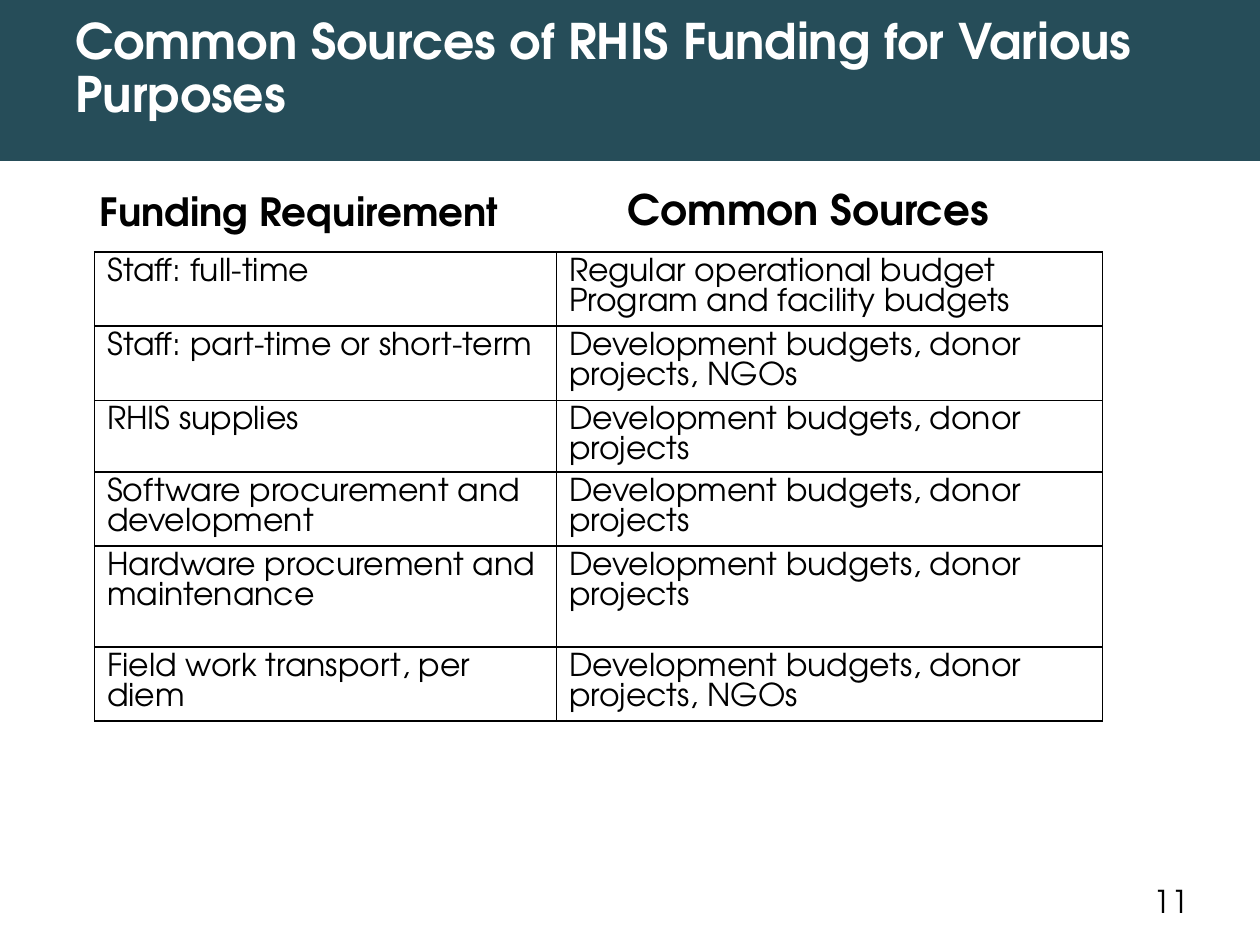
from pptx import Presentation
from pptx.dml.color import RGBColor as RGB
from pptx.enum.shapes import MSO_SHAPE as Shape
from pptx.enum.text import MSO_ANCHOR as Anchor, PP_ALIGN as Align
from pptx.oxml.ns import qn
from pptx.util import Pt
from lxml.etree import SubElement as Sub

TEAL = RGB(0x26, 0x4D, 0x59)
WHITE = RGB(0xFF, 0xFF, 0xFF)
BLACK = RGB(0, 0, 0)

DONOR = "Development budgets, donor projects"
ROWS = [
    ("Staff: full-time", "Regular operational budget\nProgram and facility budgets"),
    ("Staff: part-time or short-term", DONOR + ", NGOs"),
    ("RHIS supplies", DONOR),
    ("Software procurement and development", DONOR),
    ("Hardware procurement and maintenance", DONOR),
    ("Field work transport, per diem", DONOR + ", NGOs"),
]
COLS = [264, 312]
HIGH = [42.4, 42.4, 40.9, 42.4, 57.7, 42.4]


class Deck:
    font = "TeX Gyre Adventor"

    def __init__(self, wide, high):
        self.prs = Presentation()
        self.prs.slide_width, self.prs.slide_height = Pt(wide), Pt(high)
        self.slide = self.prs.slides.add_slide(self.prs.slide_layouts[6])

    def fill(self, frame, text, size, color=BLACK, bold=False, align=Align.LEFT,
             lead=None, before=0, indent=0):
        frame.word_wrap = True
        for i, line in enumerate(text.split("\n")):
            para = frame.add_paragraph() if i else frame.paragraphs[0]
            para.alignment = align
            para.line_spacing = lead
            para.space_before = Pt(before)
            if indent:
                para._p.get_or_add_pPr().set("marL", str(Pt(indent)))
            run = para.add_run()
            run.text = line
            run.font.name = self.font
            run.font.size = Pt(size)
            run.font.bold = bold
            run.font.color.rgb = color

    def band(self, box, color):
        rect = self.slide.shapes.add_shape(Shape.RECTANGLE, *map(Pt, box))
        rect.shadow.inherit = False
        rect.fill.solid()
        rect.fill.fore_color.rgb = color
        rect.line.fill.background()

    def text(self, box, words, size, anchor=Anchor.TOP, **style):
        frame = self.slide.shapes.add_textbox(*map(Pt, box)).text_frame
        frame.vertical_anchor = anchor
        self.fill(frame, words, size, **style)

    def head(self, box, words, size):
        self.text(box, words, size, Anchor.BOTTOM, bold=True,
                  align=Align.CENTER, lead=0.9, before=10)

    def edge(self, cell):
        props = cell._tc.get_or_add_tcPr()
        for side in ("a:lnL", "a:lnR", "a:lnT", "a:lnB"):
            line = Sub(props, qn(side), w=str(Pt(1)))
            fill = Sub(line, qn("a:solidFill"))
            Sub(fill, qn("a:srgbClr"), val=str(BLACK))

    def table(self, left, top, cols, high, rows, size, lead):
        grid = self.slide.shapes.add_table(
            len(rows), len(cols), Pt(left), Pt(top), Pt(sum(cols)), Pt(sum(high))).table
        grid.first_row = grid.horz_banding = False
        for col, wide in zip(grid.columns, cols):
            col.width = Pt(wide)
        for r, words in enumerate(rows):
            grid.rows[r].height = Pt(high[r])
            for c, word in enumerate(words):
                cell = grid.cell(r, c)
                self.edge(cell)
                cell.fill.background()
                self.fill(cell.text_frame, word, size, lead=Pt(lead))

    def save(self):
        self.prs.save("out.pptx")


def main():
    deck = Deck(720, 540)
    deck.band((-10, -12, 739.5, 104), TEAL)
    deck.text((36, 0, 620.6, 80.6), "Common Sources of RHIS Funding for Various Purposes",
              28, Anchor.MIDDLE, color=WHITE, bold=True, lead=0.9)
    deck.head((48, 102.2, 246, 35.3), "Funding Requirement", 22.2)
    deck.table(54, 144, COLS, HIGH, ROWS, 18, 16.85)
    deck.head((264, 102.2, 396, 35.3), "Common Sources", 24)
    deck.text((508.3, 500.4, 193.7, 28.8), "11", 18, indent=144)
    deck.save()


if __name__ == "__main__":
    main()
